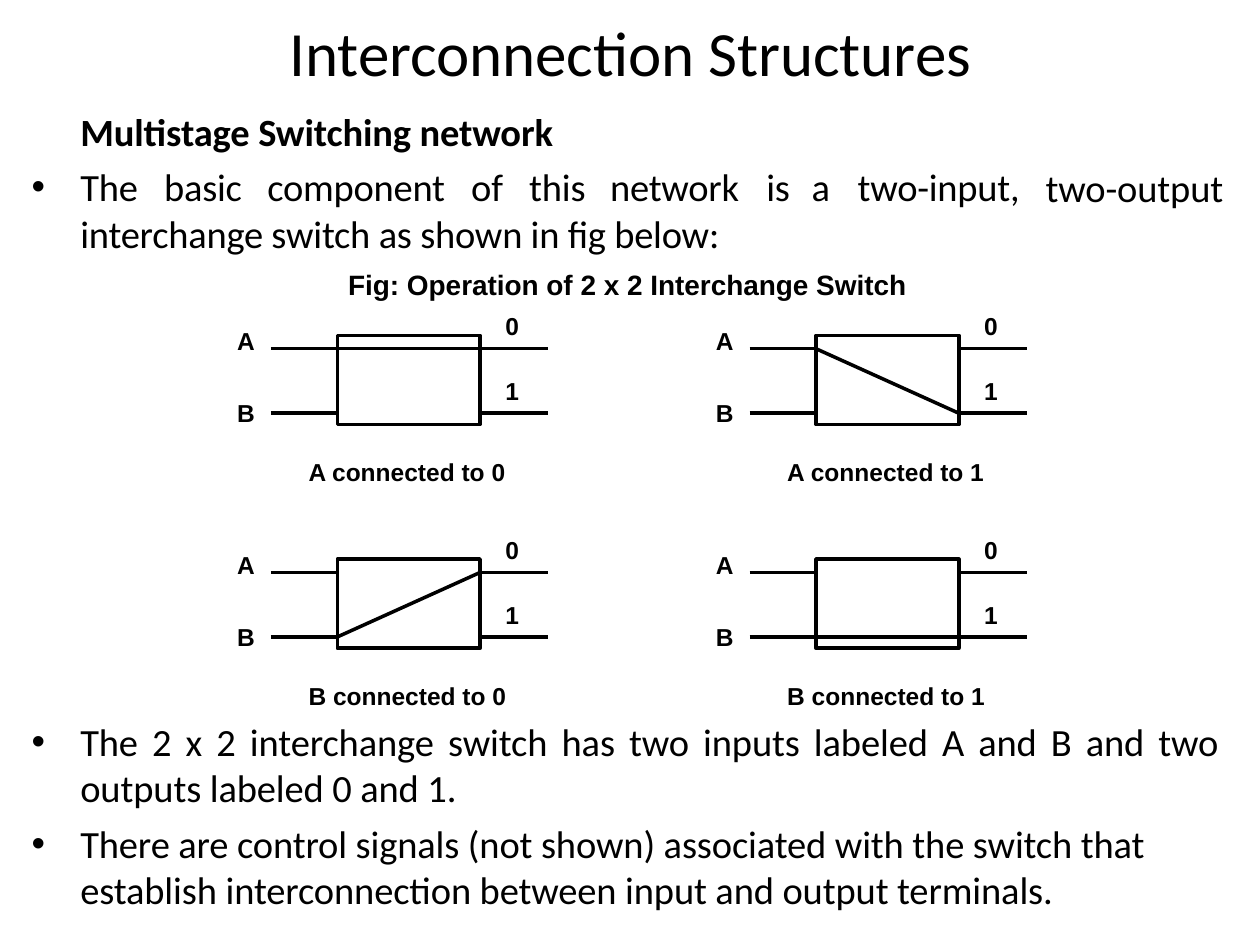
from dataclasses import dataclass

from lxml.etree import SubElement
from pptx import Presentation
from pptx.dml.color import RGBColor
from pptx.enum.shapes import MSO_CONNECTOR as CONN, MSO_SHAPE as SHAPE
from pptx.enum.text import MSO_ANCHOR as ANCHOR, PP_ALIGN as ALIGN
from pptx.oxml.ns import qn
from pptx.util import Cm, Pt

BLACK = RGBColor(0, 0, 0)
LINE_WIDTH = Pt(2)
HANGING = 0.98

PANEL_DX, PANEL_DY = 9.65, 4.51
WIRE_LEFT, WIRE_RIGHT = 5.46, 11.05
BOX_LEFT, BOX_WIDTH, BOX_HEIGHT = 6.8, 2.88, 1.8
BOX_RIGHT = BOX_LEFT + BOX_WIDTH
WIRE_TOP, WIRE_GAP = 7.03, 1.3
BOX_TOP = WIRE_TOP - 0.27
INPUTS, OUTPUTS = "AB", "01"


@dataclass
class Panel:
    source: str
    target: str
    col: int
    row: int


PANELS = [
    Panel("A", "0", 0, 0),
    Panel("A", "1", 1, 0),
    Panel("B", "0", 0, 1),
    Panel("B", "1", 1, 1),
]


def write(p, text: str, *, size: float = 22, font: str = "Calibri",
          bold: bool = False, spacing: int = 0, align=None, before: float = 0,
          left: float = 0, indent: float = 0, bullet: bool = False,
          tabs: tuple = ()) -> None:
    pPr = p._p.get_or_add_pPr()
    pPr.set("marL", str(Cm(left)))
    pPr.set("indent", str(Cm(indent)))
    if bullet:
        SubElement(pPr, qn("a:buFont"), typeface="Arial")
        SubElement(pPr, qn("a:buChar"), char="•")
    if tabs:
        tab_list = SubElement(pPr, qn("a:tabLst"))
        for pos in tabs:
            SubElement(tab_list, qn("a:tab"), pos=str(Cm(pos)), algn="l")
    if align is not None:
        p.alignment = align
    if before:
        p.space_before = Pt(before)
    r = p.add_run()
    r.text = text
    r.font.size, r.font.name, r.font.bold = Pt(size), font, bold
    r.font.color.rgb = BLACK
    if spacing:
        r._r.get_or_add_rPr().set("spc", str(spacing))


def clear_insets(tf) -> None:
    tf.word_wrap = True
    tf.margin_left = tf.margin_right = tf.margin_top = tf.margin_bottom = 0


def add_text(s, x: float, y: float, w: float, h: float):
    tf = s.shapes.add_textbox(Cm(x), Cm(y), Cm(w), Cm(h)).text_frame
    clear_insets(tf)
    return tf


def add_label(s, text: str, x: float, y: float, w: float = 0.45) -> None:
    tf = add_text(s, x, y, w, 0.63)
    write(tf.paragraphs[0], text, size=14, font="Arial", bold=True)


def add_wire(s, x1: float, y1: float, x2: float, y2: float) -> None:
    wire = s.shapes.add_connector(CONN.STRAIGHT, Cm(x1), Cm(y1), Cm(x2), Cm(y2))
    wire.line.color.rgb = BLACK
    wire.line.width = LINE_WIDTH
    SubElement(wire._element.spPr, qn("a:effectLst"))


def add_panel(s, panel: Panel) -> None:
    dx, dy = panel.col * PANEL_DX, panel.row * PANEL_DY
    box = s.shapes.add_shape(SHAPE.RECTANGLE, Cm(BOX_LEFT + dx), Cm(BOX_TOP + dy),
                             Cm(BOX_WIDTH), Cm(BOX_HEIGHT))
    box.shadow.inherit = False
    box.fill.background()
    box.line.color.rgb = BLACK
    box.line.width = LINE_WIDTH

    ys = [WIRE_TOP + dy + i * WIRE_GAP for i in range(2)]
    start, end = INPUTS.index(panel.source), OUTPUTS.index(panel.target)
    straight = start == end
    for i, y in enumerate(ys):
        if straight and i == start:
            add_wire(s, WIRE_LEFT + dx, y, WIRE_RIGHT + dx, y)
        else:
            add_wire(s, WIRE_LEFT + dx, y, BOX_LEFT + dx, y)
            add_wire(s, BOX_RIGHT + dx, y, WIRE_RIGHT + dx, y)
        add_label(s, INPUTS[i], 4.78 + dx, y - (0.46, 0.3)[i])
        add_label(s, OUTPUTS[i], 10.19 + dx, y - 0.75)
    if not straight:
        add_wire(s, BOX_LEFT + dx, ys[start], BOX_RIGHT + dx, ys[end])
    add_label(s, f"{panel.source} connected to {panel.target}",
              6.22 + dx, ys[0] + 2.19, 4.04)


def add_title(s) -> None:
    title = s.shapes.title
    title.left, title.top, title.width, title.height = Cm(3.94), Cm(0.28), Cm(17.53), Cm(1.52)
    tf = title.text_frame
    clear_insets(tf)
    tf.vertical_anchor = ANCHOR.TOP
    write(tf.paragraphs[0], "Interconnection Structures", size=36,
          spacing=-5, align=ALIGN.CENTER)


def add_intro(s) -> None:
    tf = add_text(s, 0.64, 2.18, 20.02, 3.91)
    write(tf.paragraphs[0], "Multistage Switching network", bold=True,
          spacing=-5, left=HANGING)
    write(tf.add_paragraph(),
          "The\tbasic\tcomponent\tof\tthis\tnetwork\tis\ta\ttwo-input, "
          "interchange switch as shown in fig below:",
          spacing=-10, before=5.2, left=HANGING, indent=-HANGING, bullet=True,
          tabs=(HANGING, 2.67, 4.75, 8.86, 10.03, 11.66, 14.81, 15.72, 16.65))
    write(tf.add_paragraph(), "Fig: Operation of 2 x 2 Interchange Switch",
          size=16, font="Arial", bold=True, before=7, left=6.38)
    tf = add_text(s, 21.08, 3.3, 3.68, 1.02)
    write(tf.paragraphs[0], "two-output", spacing=-5)


def add_notes_on_switch(s) -> None:
    tf = add_text(s, 0.64, 14.48, 23.93, 3.99)
    item = dict(spacing=-5, left=HANGING, indent=-HANGING, bullet=True)
    write(tf.paragraphs[0],
          "The 2 x 2 interchange switch has two inputs labeled A and B and two "
          "outputs labeled 0 and 1.", align=ALIGN.JUSTIFY, **item)
    write(tf.add_paragraph(),
          "There are control signals (not shown) associated with the switch that "
          "establish interconnection between input and output terminals.",
          before=5.2, **item)


def main() -> None:
    prs = Presentation()
    prs.slide_width, prs.slide_height = Cm(25.4), Cm(19.05)
    s = prs.slides.add_slide(prs.slide_layouts[5])
    add_title(s)
    add_intro(s)
    for panel in PANELS:
        add_panel(s, panel)
    add_notes_on_switch(s)
    prs.save("out.pptx")


if __name__ == "__main__":
    main()
